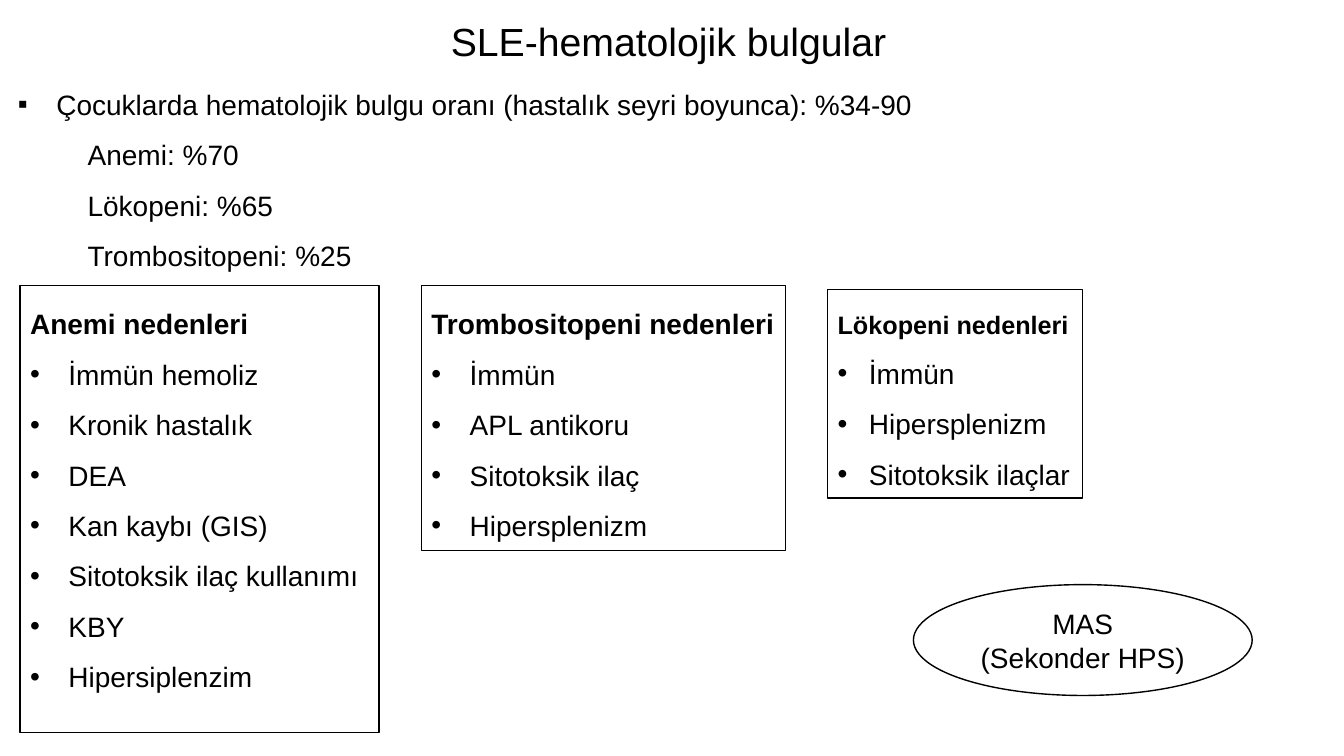
from dataclasses import dataclass

from lxml.etree import SubElement
from pptx import Presentation
from pptx.dml.color import RGBColor
from pptx.enum.shapes import MSO_SHAPE
from pptx.enum.text import MSO_ANCHOR, MSO_AUTO_SIZE, PP_ALIGN
from pptx.oxml.ns import qn
from pptx.shapes.autoshape import Shape
from pptx.slide import Slide
from pptx.text.text import TextFrame
from pptx.util import Inches, Pt

BLACK = RGBColor(0x00, 0x00, 0x00)
WHITE = RGBColor(0xFF, 0xFF, 0xFF)
FONT = "Arial"


@dataclass
class Line:
    text: str
    size: int = 20
    bold: bool = False
    align: PP_ALIGN = PP_ALIGN.LEFT
    spacing: float = 1.0
    bullet: str = ""
    margin: float = 0
    hanging: float = 0


@dataclass
class CauseBox:
    heading: str
    causes: list[str]
    left: float
    top: float
    width: float
    height: float
    heading_size: int = 20
    hanging: float = 0.38
    wrap: bool = True


CAUSE_BOXES = [
    CauseBox("Anemi nedenleri",
             ["İmmün hemoliz", "Kronik hastalık", "DEA", "Kan kaybı (GIS)",
              "Sitotoksik ilaç kullanımı", "KBY", "Hipersiplenzim"],
             0.2, 2.83, 3.56, 4.44),
    CauseBox("Trombositopeni nedenleri",
             ["İmmün", "APL antikoru", "Sitotoksik ilaç", "Hipersplenizm"],
             4.18, 2.83, 3.61, 2.63),
    CauseBox("Lökopeni nedenleri",
             ["İmmün", "Hipersplenizm", "Sitotoksik ilaçlar"],
             8.21, 2.87, 2.53, 2.07, heading_size=18, hanging=0.31, wrap=False),
]


def write_lines(frame: TextFrame, lines: list[Line]) -> None:
    for index, line in enumerate(lines):
        paragraph = frame.paragraphs[0] if index == 0 else frame.add_paragraph()
        paragraph.text = line.text
        paragraph.alignment = line.align
        properties = paragraph._p.get_or_add_pPr()
        properties.set("marL", str(Inches(line.margin)))
        properties.set("indent", str(-Inches(line.hanging)))
        if line.bullet:
            SubElement(properties, qn("a:buFont")).set("typeface", FONT)
            SubElement(properties, qn("a:buChar")).set("char", line.bullet)
        paragraph.line_spacing = line.spacing
        paragraph.font.name = FONT
        paragraph.font.size = Pt(line.size)
        paragraph.font.bold = line.bold
        paragraph.font.color.rgb = BLACK


def add_text(slide: Slide, left: float, top: float, width: float, height: float,
             lines: list[Line]) -> None:
    frame = slide.shapes.add_textbox(
        Inches(left), Inches(top), Inches(width), Inches(height)).text_frame
    frame.word_wrap = True
    frame.auto_size = MSO_AUTO_SIZE.SHAPE_TO_FIT_TEXT
    write_lines(frame, lines)


def add_outlined(slide: Slide, kind: MSO_SHAPE, left: float, top: float,
                 width: float, height: float, lines: list[Line]) -> Shape:
    shape = slide.shapes.add_shape(
        kind, Inches(left), Inches(top), Inches(width), Inches(height))
    shape.shadow.inherit = False
    shape.fill.solid()
    shape.fill.fore_color.rgb = WHITE
    shape.line.color.rgb = BLACK
    shape.line.width = Pt(1)
    write_lines(shape.text_frame, lines)
    return shape


def add_cause_box(slide: Slide, box: CauseBox) -> None:
    lines = [Line(box.heading, box.heading_size, bold=True, spacing=1.5)]
    lines += [Line(cause, spacing=1.5, bullet="•", margin=box.hanging,
                   hanging=box.hanging) for cause in box.causes]
    frame = add_outlined(slide, MSO_SHAPE.RECTANGLE, box.left, box.top,
                         box.width, box.height, lines).text_frame
    frame.vertical_anchor = MSO_ANCHOR.TOP
    frame.word_wrap = box.wrap
    frame.auto_size = MSO_AUTO_SIZE.SHAPE_TO_FIT_TEXT


def main() -> None:
    presentation = Presentation()
    presentation.slide_width = Inches(13.33)
    presentation.slide_height = Inches(7.5)
    slide = presentation.slides.add_slide(presentation.slide_layouts[6])

    # Title
    add_text(slide, 0.2, 0.12, 12.86, 0.57,
             [Line("SLE-hematolojik bulgular", 28, align=PP_ALIGN.CENTER)])

    # Frequency of findings
    rates = ["Anemi: %70", "Lökopeni: %65", "Trombositopeni: %25"]
    add_text(slide, 0.08, 0.65, 11.02, 2.12, [
        Line("Çocuklarda hematolojik bulgu oranı (hastalık seyri boyunca): %34-90",
             spacing=1.5, bullet="▪", margin=0.38, hanging=0.38),
        *(Line(rate, spacing=1.5, margin=0.69) for rate in rates),
    ])

    # Causes of each finding
    for box in CAUSE_BOXES:
        add_cause_box(slide, box)

    # Related syndrome
    syndrome = [Line(text, align=PP_ALIGN.CENTER) for text in ("MAS", "(Sekonder HPS)")]
    add_outlined(slide, MSO_SHAPE.OVAL, 9.06, 5.8, 3.36, 1.1, syndrome)

    presentation.save("out.pptx")


if __name__ == "__main__":
    main()
